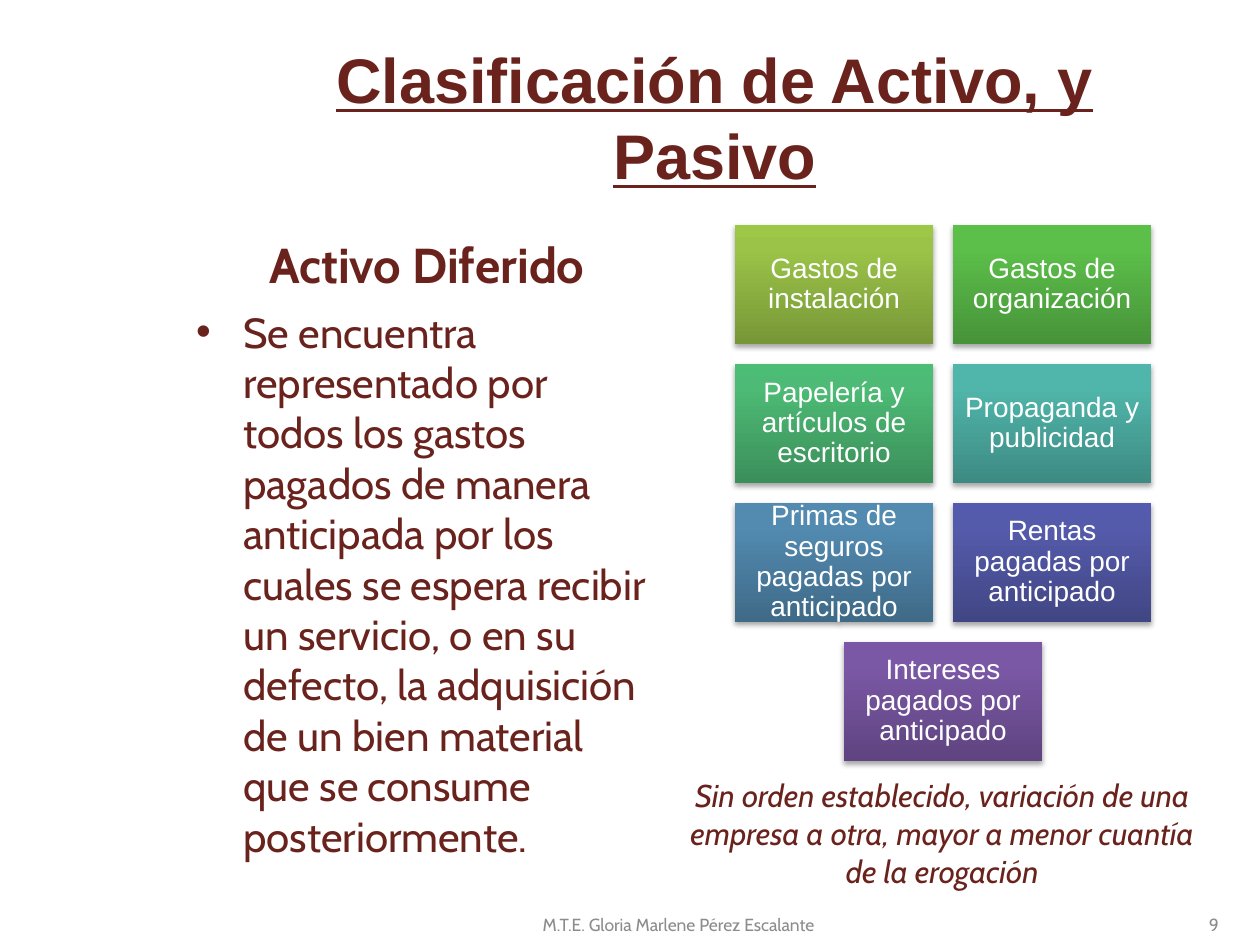
"""Build the slide on deferred assets."""
from lxml import etree
from pptx import Presentation
from pptx.dml.color import RGBColor
from pptx.enum import shapes, text
from pptx.oxml import parse_xml
from pptx.oxml.ns import nsdecls, qn
from pptx.util import Pt

HUES = {"wine": "6A221D", "gray": "8C8C8C", "white": "FFFFFF", "black": "000000"}
CARDS = {
    "Gastos de instalación": ("779737", "9BC348", "9DC746"),
    "Gastos de organización": ("479339", "5CBF4A", "5BC249"),
    "Papelería y artículos de escritorio": ("3B8F5A", "4DBA75", "4BBD75"),
    "Propaganda y publicidad": ("3D8B83", "50B5AA", "4EB8AC"),
    "Primas de seguros pagadas por anticipado": ("3F6A88", "528AB0", "518BB3"),
    "Rentas pagadas por anticipado": ("414684", "555BAB", "545AAE"),
    "Intereses pagados por anticipado": ("5F4480", "7B58A6", "7C57A8"),
}
BODY = ("Se encuentra representado por todos los gastos pagados de manera "
        "anticipada por los cuales se espera recibir un servicio, o en su "
        "defecto, la adquisición de un bien material que se consume "
        "posteriormente.")
NOTE = ("Sin orden establecido, variación de una empresa a otra, "
        "mayor a menor cuantía de la erogación")


def write(shape, words, size, font="Cabin", hue="wine", align="CENTER",
          anchor="TOP", bold=False, italic=False, under=False, lead=None,
          inset=None, bullet=False):
    frame = shape.text_frame
    frame.word_wrap = True
    frame.auto_size = text.MSO_AUTO_SIZE.NONE
    frame.vertical_anchor = getattr(text.MSO_ANCHOR, anchor)
    if inset is not None:
        frame.margin_left = frame.margin_right = Pt(inset)
        frame.margin_top = frame.margin_bottom = Pt(inset)
    para = frame.paragraphs[0]
    para.alignment = getattr(text.PP_ALIGN, align)
    if lead:
        para.line_spacing = lead
    if bullet:
        props = para._p.get_or_add_pPr()
        props.set("marL", str(Pt(27)))
        props.set("indent", str(Pt(-27)))
        etree.SubElement(props, qn("a:buFont")).set("typeface", "Arial")
        etree.SubElement(props, qn("a:buChar")).set("char", "•")
    run = para.add_run()
    run.text = words
    face = run.font
    face.size, face.name = Pt(size), font
    face.bold, face.italic, face.underline = bold, italic, under
    face.color.rgb = RGBColor.from_string(HUES[hue])


def label(slide, box, words, size, **form):
    write(slide.shapes.add_textbox(*map(Pt, box)), words, size, **form)


def shade(shape, tones):
    shape.line.fill.background()
    stops = "".join(
        f'<a:gs pos="{spot}000"><a:srgbClr val="{tone}"/></a:gs>'
        for spot, tone in zip((0, 80, 100), tones))
    props = shape._element.spPr
    props.find(qn("a:ln")).addprevious(parse_xml(
        f'<a:gradFill {nsdecls("a")} rotWithShape="1"><a:gsLst>{stops}</a:gsLst>'
        '<a:lin ang="16200000" scaled="0"/></a:gradFill>'))
    props.append(parse_xml(
        f'<a:effectLst {nsdecls("a")}><a:outerShdw blurRad="{Pt(3.1)}" '
        f'dist="{Pt(1.8)}" dir="5400000" rotWithShape="0">'
        f'<a:srgbClr val="{HUES["black"]}"><a:alpha val="35000"/></a:srgbClr>'
        '</a:outerShdw></a:effectLst>'))


def cards(slide, left, top, wide, high, gap):
    for spot, (words, tones) in enumerate(CARDS.items()):
        row, col = divmod(spot, 2)
        if spot == len(CARDS) - 1:
            col = 0.5
        box = (left + col * (wide + gap), top + row * (high + gap), wide, high)
        card = slide.shapes.add_shape(shapes.MSO_SHAPE.RECTANGLE, *map(Pt, box))
        shade(card, tones)
        write(card, words, 16, font="Arial", hue="white", anchor="MIDDLE",
              lead=0.9, inset=5)


def main():
    deck = Presentation()
    deck.slide_width, deck.slide_height = Pt(720), Pt(540)
    slide = deck.slides.add_slide(deck.slide_layouts[5])
    title = slide.shapes.title
    title.left, title.top, title.width, title.height = map(Pt, (133, 21.6, 551, 90))
    write(title, "Clasificación de Activo, y Pasivo", 36, font="Arial",
          anchor="MIDDLE", bold=True, under=True)
    label(slide, (105, 121, 278, 50.4), "Activo Diferido", 28,
          anchor="BOTTOM", bold=True)
    label(slide, (105, 171.4, 278, 311), BODY, 24, align="LEFT", bullet=True)
    cards(slide, 420, 128.4, 113.2, 68, 11.4)
    label(slide, (382.5, 440, 311.8, 72.7), NOTE, 18, italic=True)
    label(slide, (273.6, 514, 228.2, 28.8), "M.T.E. Gloria Marlene Pérez Escalante",
          10, hue="gray", anchor="MIDDLE")
    label(slide, (535.7, 514, 167.8, 28.8), "9", 10, hue="gray",
          align="RIGHT", anchor="MIDDLE")
    deck.save("out.pptx")


if __name__ == "__main__":
    main()
